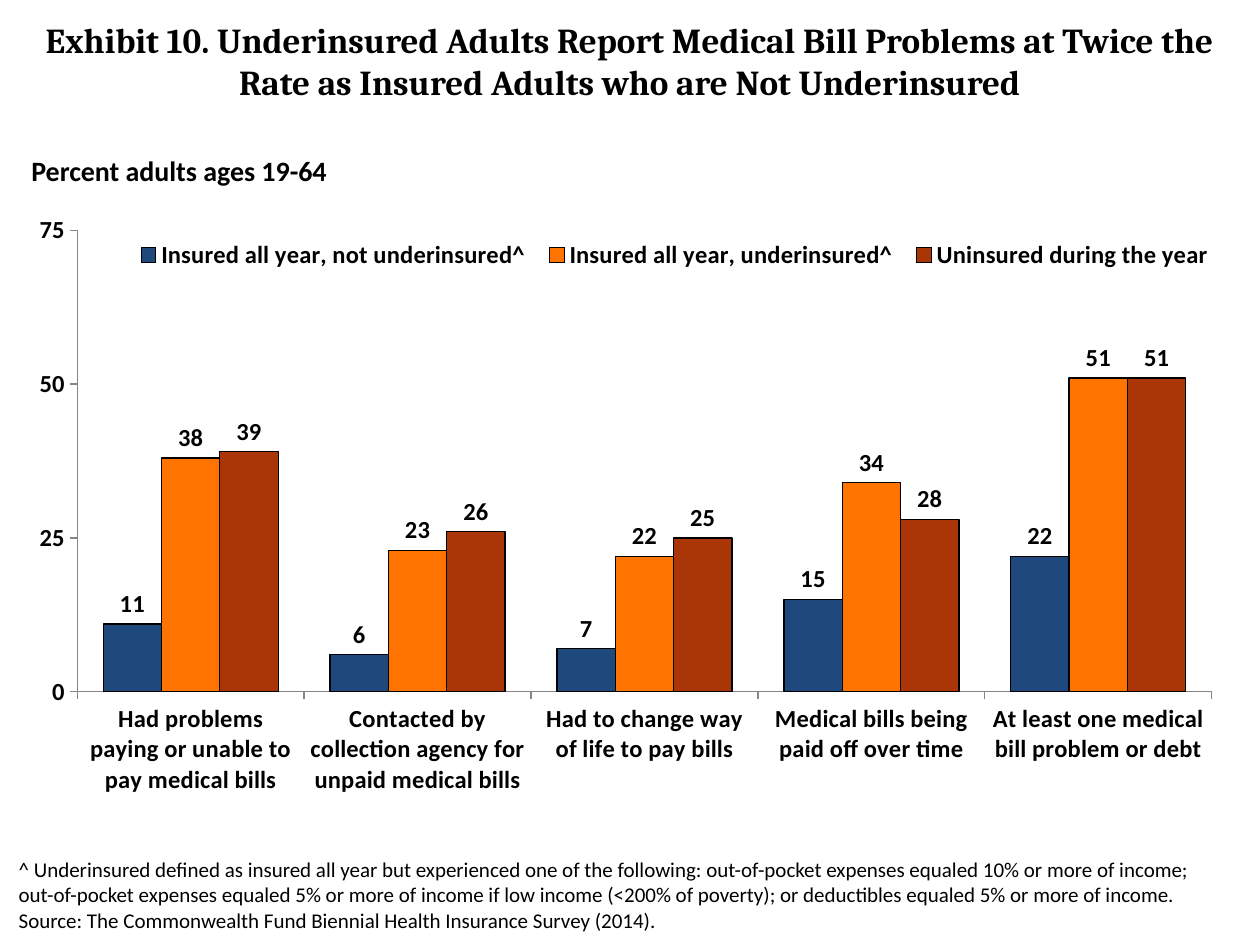
from typing import NamedTuple

from lxml import etree
from pptx import Presentation
from pptx.chart.data import CategoryChartData
from pptx.dml.color import RGBColor
from pptx.enum.chart import XL_CHART_TYPE as ChartType
from pptx.enum.chart import XL_LABEL_POSITION as LabelPosition
from pptx.enum.chart import XL_LEGEND_POSITION as LegendPosition
from pptx.enum.chart import XL_TICK_MARK as TickMark
from pptx.enum.text import PP_ALIGN as Align
from pptx.oxml.ns import qn
from pptx.util import Inches, Pt

BLACK = "000000"
AXIS_GRAY = "868686"


class Box(NamedTuple):
    left: float
    top: float
    width: float
    height: float

    def lengths(self):
        return [Inches(value) for value in self]


class Group(NamedTuple):
    name: str
    percents: tuple
    color: str


PROBLEMS = [
    "Had problems paying or unable to pay medical bills",
    "Contacted by collection agency for unpaid medical bills",
    "Had to change way of life to pay bills",
    "Medical bills being paid off over time",
    "At least one medical bill problem or debt",
]
GROUPS = [
    Group("Insured all year, not underinsured^", (11, 6, 7, 15, 22), "1F497D"),
    Group("Insured all year, underinsured^", (38, 23, 22, 34, 51), "FF7300"),
    Group("Uninsured during the year", (39, 26, 25, 28, 51), "AA3607"),
]


def rgb(color: str) -> RGBColor:
    return RGBColor.from_string(color)


def style_font(font, size: float, name: str = "Calibri", bold: bool = False) -> None:
    font.size = Pt(size)
    font.name = name
    font.bold = bold
    font.color.rgb = rgb(BLACK)


def add_text(slide, box: Box, *paragraphs: str, align=Align.LEFT, **font_format) -> None:
    frame = slide.shapes.add_textbox(*box.lengths()).text_frame
    frame.word_wrap = True
    for index, text in enumerate(paragraphs):
        paragraph = frame.paragraphs[0] if index == 0 else frame.add_paragraph()
        paragraph.alignment = align
        run = paragraph.add_run()
        run.text = text
        style_font(run.font, **font_format)


def set_layout(element, position: int, fractions: Box, inner: bool = False) -> None:
    """Place a chart part by fractions of the chart's width and height."""
    for old in element.findall(qn("c:layout")):
        element.remove(old)
    layout = etree.Element(qn("c:layout"))
    element.insert(position, layout)
    manual = etree.SubElement(layout, qn("c:manualLayout"))
    settings = [("layoutTarget", "inner")] if inner else []
    settings += [("xMode", "edge"), ("yMode", "edge")]
    settings += zip("xywh", fractions)
    for tag, value in settings:
        etree.SubElement(manual, qn(f"c:{tag}")).set("val", str(value))


def style_axis(axis) -> None:
    axis.has_major_gridlines = False
    axis.major_tick_mark = TickMark.OUTSIDE
    axis.minor_tick_mark = TickMark.NONE
    axis.format.line.color.rgb = rgb(AXIS_GRAY)
    axis.format.line.width = Pt(0.75)


def add_problem_chart(slide, box: Box) -> None:
    data = CategoryChartData(number_format="0")
    data.categories = PROBLEMS
    for group in GROUPS:
        data.add_series(group.name, group.percents)
    chart = slide.shapes.add_chart(ChartType.COLUMN_CLUSTERED, *box.lengths(), data).chart
    style_font(chart.font, 14, bold=True)
    chart.has_title = False

    chart.has_legend = True
    chart.legend.position = LegendPosition.TOP
    chart.legend.include_in_layout = False
    set_layout(chart.legend._element, 1, Box(0.08, 0.05, 0.91, 0.06))

    style_axis(chart.category_axis)
    style_axis(chart.value_axis)
    chart.value_axis.minimum_scale = 0
    chart.value_axis.maximum_scale = 75
    chart.value_axis.major_unit = 25

    plot = chart.plots[0]
    plot.gap_width = 89
    plot.overlap = 0
    plot.vary_by_categories = False
    set_layout(chart._chartSpace.chart.plotArea, 0, Box(0.04, 0.04, 0.94, 0.74), inner=True)
    for series, group in zip(plot.series, GROUPS):
        series.format.fill.solid()
        series.format.fill.fore_color.rgb = rgb(group.color)
        series.format.line.color.rgb = rgb(BLACK)
        series.format.line.width = Pt(0.75)
        series.data_labels.show_value = True
        series.data_labels.position = LabelPosition.OUTSIDE_END


def main() -> None:
    deck = Presentation()
    deck.slide_width, deck.slide_height = Inches(10), Inches(7.5)
    slide = deck.slides.add_slide(deck.slide_layouts[6])

    add_text(
        slide, Box(0, 0.1, 10, 1.11),
        "Exhibit 10. Underinsured Adults Report Medical Bill Problems at Twice the "
        "Rate as Insured Adults who are Not Underinsured",
        align=Align.CENTER, size=20, name="Cambria", bold=True,
    )
    add_text(
        slide, Box(0.05, 6.75, 9.67, 0.71),
        "^ Underinsured defined as insured all year but experienced one of the following: "
        "out-of-pocket expenses equaled 10% or more of income; out-of-pocket expenses "
        "equaled 5% or more of income if low income (<200% of poverty); or deductibles "
        "equaled 5% or more of income.",
        "Source: The Commonwealth Fund Biennial Health Insurance Survey (2014).",
        size=12,
    )
    add_problem_chart(slide, Box(0.23, 1.63, 9.58, 4.95))
    add_text(slide, Box(0.15, 1.17, 6.01, 0.38), "Percent adults ages 19-64", size=16, bold=True)

    deck.save("out.pptx")


if __name__ == "__main__":
    main()
